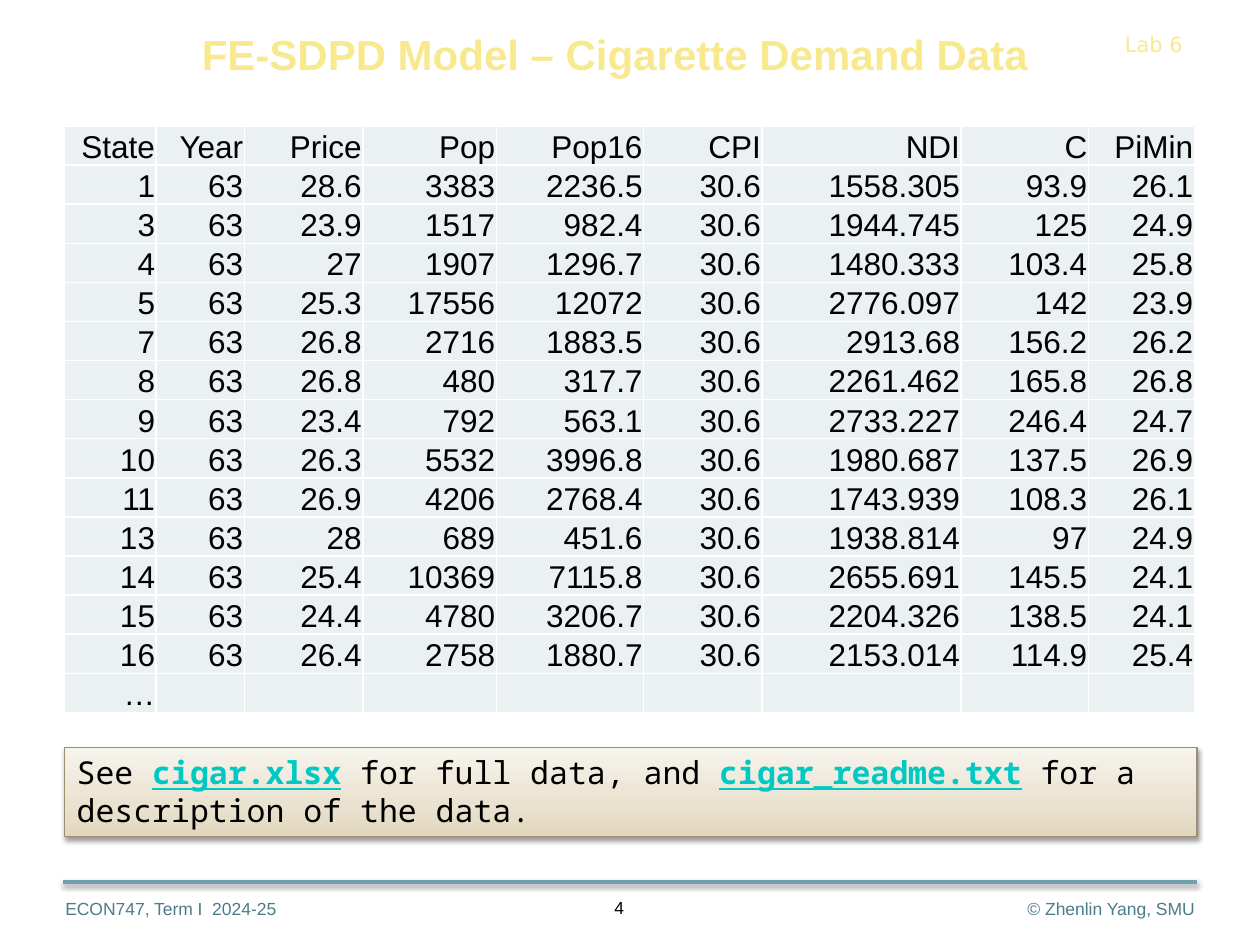
from lxml.etree import SubElement
from pptx import Presentation
from pptx.dml.color import RGBColor
from pptx.enum.shapes import MSO_CONNECTOR, MSO_SHAPE
from pptx.enum.text import MSO_ANCHOR as ANCHOR, PP_ALIGN as ALIGN
from pptx.oxml import parse_xml
from pptx.oxml.ns import nsdecls, qn
from pptx.util import Inches, Pt

# Content
TITLE = "FE-SDPD Model – Cigarette Demand Data"
LAB = "Lab 6"
COURSE = "ECON747, Term I  2024-25"
COPYRIGHT = "© Zhenlin Yang, SMU"
PAGE = "4"
LINK = {"color": "link", "bold": True, "underline": True}
NOTE = [("See ", {}), ("cigar.xlsx", LINK), (" for full data, and ", {}),
        ("cigar_readme.txt", LINK), (" for a description of the data.", {})]
HEADERS = ["State", "Year", "Price", "Pop", "Pop16", "CPI", "NDI", "C", "PiMin"]
STATES = [
    ("1", "63", "28.6", "3383", "2236.5", "30.6", "1558.305", "93.9", "26.1"),
    ("3", "63", "23.9", "1517", "982.4", "30.6", "1944.745", "125", "24.9"),
    ("4", "63", "27", "1907", "1296.7", "30.6", "1480.333", "103.4", "25.8"),
    ("5", "63", "25.3", "17556", "12072", "30.6", "2776.097", "142", "23.9"),
    ("7", "63", "26.8", "2716", "1883.5", "30.6", "2913.68", "156.2", "26.2"),
    ("8", "63", "26.8", "480", "317.7", "30.6", "2261.462", "165.8", "26.8"),
    ("9", "63", "23.4", "792", "563.1", "30.6", "2733.227", "246.4", "24.7"),
    ("10", "63", "26.3", "5532", "3996.8", "30.6", "1980.687", "137.5", "26.9"),
    ("11", "63", "26.9", "4206", "2768.4", "30.6", "1743.939", "108.3", "26.1"),
    ("13", "63", "28", "689", "451.6", "30.6", "1938.814", "97", "24.9"),
    ("14", "63", "25.4", "10369", "7115.8", "30.6", "2655.691", "145.5", "24.1"),
    ("15", "63", "24.4", "4780", "3206.7", "30.6", "2204.326", "138.5", "24.1"),
    ("16", "63", "26.4", "2758", "1880.7", "30.6", "2153.014", "114.9", "25.4"),
]
ROWS = [HEADERS, *STATES, ["…"] + [""] * (len(HEADERS) - 1)]
COLUMN_WIDTHS = [0.73, 0.7, 0.94, 1.06, 1.17, 0.94, 1.58, 1.01, 0.84]
TABLE_HEIGHT = 4.58

COLORS = {"title": "F9E98E", "footer": "4C7C8B", "rule": "6EA0B0", "text": "000000",
          "link": "00C8C3", "cell": "EBF0F2", "border": "FFFFFF", "note_line": "9C8F6F",
          "shadow": "000000"}
NOTE_GRADIENT = [(0, "E2D7BD"), (35, "EAE2D0"), (100, "F7F4ED")]


def rgb(name):
    return RGBColor.from_string(COLORS[name])


def write(frame, text, size=18, font="Arial", color="text", bold=False,
          align=ALIGN.LEFT, anchor=ANCHOR.TOP, wrap=True):
    """Fill a text frame with a string or a list of (text, format) runs."""
    frame.word_wrap = wrap
    frame.vertical_anchor = anchor
    paragraph = frame.paragraphs[0]
    paragraph.alignment = align
    for part, style in [(text, {})] if isinstance(text, str) else text:
        run = paragraph.add_run()
        run.text = part
        run.font.size = Pt(size)
        run.font.name = font
        run.font.bold = style.get("bold", bold)
        run.font.underline = style.get("underline", False)
        run.font.color.rgb = rgb(style.get("color", color))


def add_shadow(shape):
    shape._element.spPr.append(parse_xml(
        f'<a:effectLst {nsdecls("a")}><a:outerShdw blurRad="{Pt(3.1)}" dist="{Pt(1.6)}" '
        f'dir="5400000" rotWithShape="0"><a:srgbClr val="{COLORS["shadow"]}">'
        '<a:alpha val="38000"/></a:srgbClr></a:outerShdw></a:effectLst>'))


def add_borders(cell):
    properties = cell._tc.get_or_add_tcPr()
    for position, side in enumerate(("lnL", "lnR", "lnT", "lnB")):
        line = parse_xml(f'<a:{side} {nsdecls("a")} w="{Pt(1)}"/>')
        fill = SubElement(line, qn("a:solidFill"))
        SubElement(fill, qn("a:srgbClr"), val=COLORS["border"])
        properties.insert(position, line)


prs = Presentation()
prs.slide_width, prs.slide_height = Inches(10), Inches(7.5)
slide = prs.slides.add_slide(prs.slide_layouts[6])
shapes = slide.shapes

# Footer rule
rule = shapes.add_connector(MSO_CONNECTOR.STRAIGHT, Inches(0.5), Inches(7), Inches(9.5), Inches(7))
rule.line.color.rgb = rgb("rule")
rule.line.width = Pt(2)
add_shadow(rule)

# Title, lab label and footer
for box, text, style in [
    ((0.42, 7.08, 2.33, 0.27), COURSE, {"size": 10, "color": "footer"}),
    ((7.25, 7.08, 2.33, 0.27), COPYRIGHT, {"size": 10, "color": "footer", "align": ALIGN.RIGHT}),
    ((8.83, 0.2, 0.67, 0.3), LAB,
     {"size": 12, "font": "DejaVu Sans", "color": "title", "wrap": False}),
    ((1.17, 0.18, 7.42, 0.49), TITLE,
     {"size": 24, "color": "title", "bold": True, "align": ALIGN.CENTER, "anchor": ANCHOR.MIDDLE}),
    ((3.75, 7.07, 2.33, 0.27), PAGE, {"size": 10, "align": ALIGN.CENTER}),
]:
    write(shapes.add_textbox(*map(Inches, box)).text_frame, text, **style)

# Data table
table = shapes.add_table(len(ROWS), len(HEADERS), Inches(0.51), Inches(1),
                         Inches(sum(COLUMN_WIDTHS)), Inches(TABLE_HEIGHT)).table
for column, width in zip(table.columns, COLUMN_WIDTHS):
    column.width = Inches(width)
table.first_row = table.horz_banding = False
for r, values in enumerate(ROWS):
    for c, value in enumerate(values):
        cell = table.cell(r, c)
        cell.margin_left = cell.margin_right = cell.margin_top = Inches(0.01)
        cell.margin_bottom = 0
        cell.vertical_anchor = ANCHOR.BOTTOM
        cell.fill.solid()
        cell.fill.fore_color.rgb = rgb("cell")
        add_borders(cell)
        if value:
            write(cell.text_frame, value, align=ALIGN.RIGHT, anchor=None, wrap=None)

# Note on the data files
note = shapes.add_shape(MSO_SHAPE.RECTANGLE, Inches(0.51), Inches(5.93), Inches(8.99), Inches(0.71))
stops = "".join(f'<a:gs pos="{pos * 1000}"><a:srgbClr val="{color}"/></a:gs>'
                for pos, color in NOTE_GRADIENT)
note._element.spPr.append(parse_xml(
    f'<a:gradFill {nsdecls("a")} rotWithShape="1"><a:gsLst>{stops}</a:gsLst>'
    '<a:lin ang="16200000" scaled="1"/></a:gradFill>'))
note.line.color.rgb = rgb("note_line")
note.line.width = Pt(0.75)
add_shadow(note)
write(note.text_frame, NOTE, font="Noto Sans Mono")

prs.save("out.pptx")
